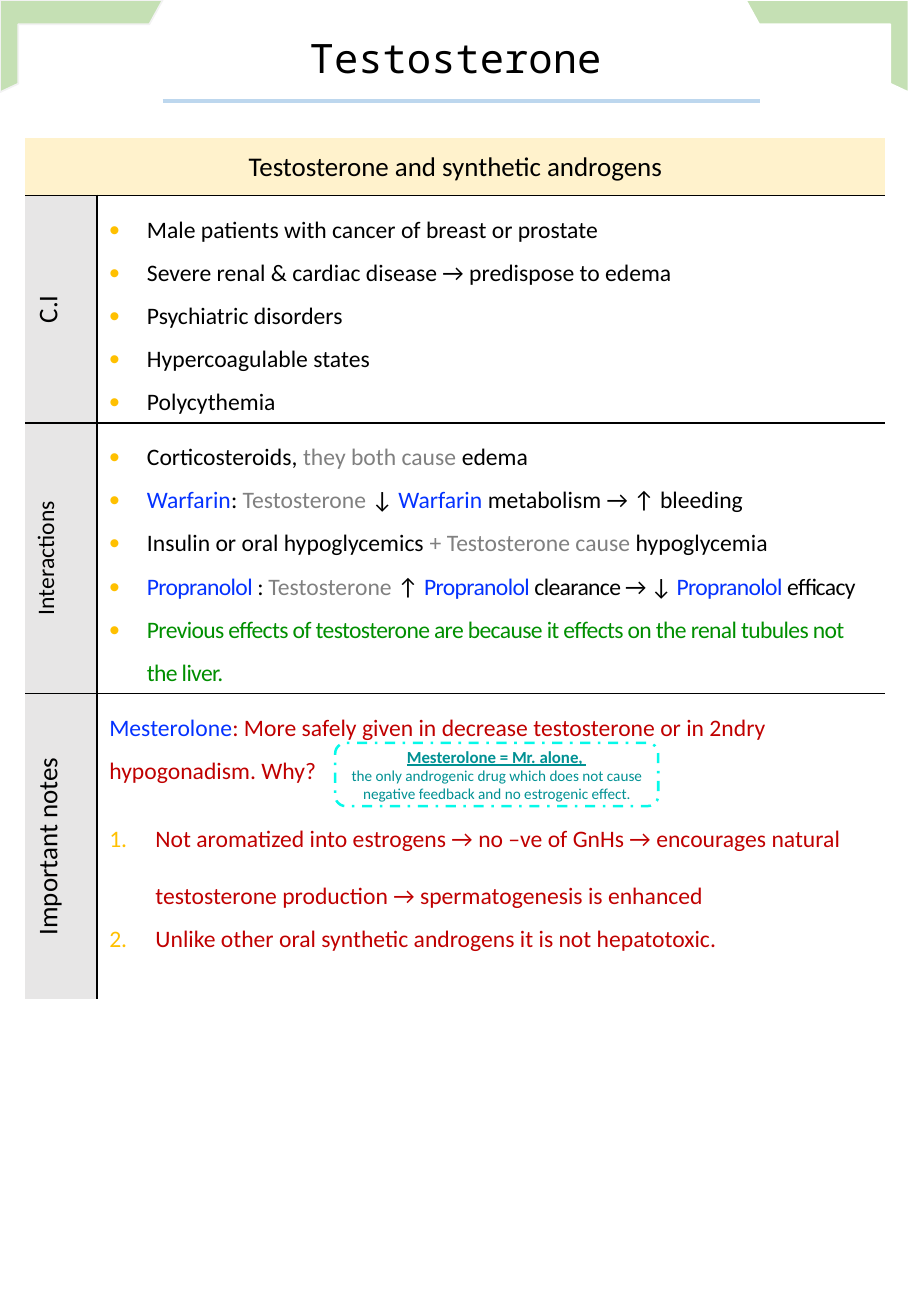
from dataclasses import dataclass

from lxml import etree
from pptx import Presentation
from pptx.dml.color import RGBColor
from pptx.enum.dml import MSO_LINE
from pptx.enum.shapes import MSO_CONNECTOR, MSO_SHAPE
from pptx.enum.text import MSO_ANCHOR, PP_ALIGN
from pptx.oxml.ns import qn
from pptx.util import Inches, Pt

CENTER, LEFT, MIDDLE, TOP = PP_ALIGN.CENTER, PP_ALIGN.LEFT, MSO_ANCHOR.MIDDLE, MSO_ANCHOR.TOP
TITLE_ONLY = 5
NO_TABLE_STYLE = "{2D5ABB26-0587-4C30-8999-92F81FD0307C}"


@dataclass(frozen=True)
class Theme:
    title_font: str = "Noto Sans Mono"
    body_font: str = "Calibri"
    title: int = 24
    heading: int = 16
    body: int = 14
    callout_lead: int = 10
    callout_body: int = 9
    black: str = "000000"
    white: str = "FFFFFF"
    grey: str = "808080"
    blue: str = "0432FF"
    green: str = "008F00"
    red: str = "C00000"
    teal: str = "009193"
    bullet: str = "FFC000"
    header_fill: str = "FFF2CC"
    label_fill: str = "E7E6E6"
    corner_fill: str = "C5E0B4"
    left_corner_line: str = "F2F2F2"
    rule: str = "BDD7EE"
    callout_line: str = "04F9E9"


theme = Theme()
BLACK, GREY, BLUE, GREEN, RED = theme.black, theme.grey, theme.blue, theme.green, theme.red
TIGHT = -40  # letter spacing, hundredths of a point

# Content: a paragraph is a list of (text, colour[, letter spacing]) runs
TITLE = "Testosterone"
HEADER = "Testosterone and synthetic androgens"
CONTRAINDICATIONS = [
    [("Male patients with cancer of breast or prostate", BLACK)],
    [("Severe renal & cardiac disease → predispose to edema", BLACK)],
    [("Psychiatric disorders", BLACK)],
    [("Hypercoagulable states", BLACK)],
    [("Polycythemia", BLACK)],
]
INTERACTIONS = [
    [("Corticosteroids, ", BLACK), ("they both cause ", GREY), ("edema", BLACK)],
    [("Warfarin", BLUE), (": ", BLACK), ("Testosterone ", GREY), ("↓ ", BLACK),
     ("Warfarin ", BLUE), ("metabolism → ↑ bleeding", BLACK)],
    [("Insulin or oral hypoglycemics ", BLACK), ("+ Testosterone cause ", GREY),
     ("hypoglycemia", BLACK)],
    [("Propranolol ", BLUE, TIGHT), (": ", BLACK, TIGHT), ("Testosterone ", GREY),
     ("↑ ", BLACK), ("Propranolol", BLUE, TIGHT), (" clearance → ↓ ", BLACK, TIGHT),
     ("Propranolol", BLUE, TIGHT), (" efficacy", BLACK, TIGHT)],
    [("Previous effects of testosterone are because it effects on the renal "
      "tubules not the liver.", GREEN, TIGHT)],
]
NOTES = [
    [("Mesterolone", BLUE),
     (": More safely given in decrease testosterone or in 2ndry hypogonadism. Why?", RED)],
    [("Not aromatized into estrogens → no –ve of GnHs → encourages natural "
      "testosterone production → spermatogenesis is enhanced", RED)],
    [("Unlike other oral synthetic androgens it is not hepatotoxic.", RED)],
]

# Paragraph formats: (marker, indent, line spacing, space before)
BULLET = ("bullet", 0.31, 1.5, 0)
NOTE_FORMATS = [(None, 0, 1.5, 12), ("number", 0.38, 2, 6), ("number", 0.38, 1.5, 0)]

# Rows: label, label size, anchor, paragraphs, formats
ROWS = [
    ("C.I", theme.heading, MIDDLE, CONTRAINDICATIONS, [BULLET] * 5),
    ("Interactions", theme.body, TOP, INTERACTIONS, [BULLET] * 5),
    ("Important notes", theme.heading, TOP, NOTES, NOTE_FORMATS),
]
CALLOUT = [
    ("Mesterolone = Mr. alone, ", theme.callout_lead, True),
    ("the only androgenic drug which does not cause negative feedback "
     "and no estrogenic effect.", theme.callout_body, False),
]

# Layout in inches
SLIDE_WIDTH, SLIDE_HEIGHT = 7.5, 10.84
TABLE_LEFT, TABLE_TOP = 0.21, 1.14
COLUMN_WIDTHS = [0.59, 6.49]
ROW_HEIGHTS = [0.47, 1.85, 2.2, 2.52]
FRAME_WIDTH = 7.48
CORNER = [(0, 0), (0, 0.76), (0.15, 0.69), (0.15, 0.2), (1.23, 0.2), (1.34, 0)]


def box(*lengths):
    return [Inches(length) for length in lengths]


def style(font, size, colour=None, name=theme.body_font):
    font.name, font.size = name, Pt(size)
    if colour:
        font.color.rgb = RGBColor.from_string(colour)


def paint(shape, fill, line, width):
    shape.shadow.inherit = False
    shape.fill.solid()
    shape.fill.fore_color.rgb = RGBColor.from_string(fill)
    shape.line.color.rgb = RGBColor.from_string(line)
    shape.line.width = Pt(width)


def child(parent, tag, **attributes):
    return etree.SubElement(parent, qn(tag), **attributes)


def add_marker(paragraph, marker, indent):
    properties = paragraph._p.get_or_add_pPr()
    offset = Inches(indent)
    properties.set("marL", str(offset))
    properties.set("indent", str(-offset))
    child(child(properties, "a:buClr"), "a:srgbClr", val=theme.bullet)
    if marker == "bullet":
        child(properties, "a:buSzPct", val="125000")
        child(properties, "a:buFont", typeface="Arial")
        child(properties, "a:buChar", char="•")
    else:
        child(properties, "a:buFont", typeface="+mj-lt")
        child(properties, "a:buAutoNum", type="arabicPeriod")


def set_borders(cell, sides):
    properties = cell._tc.get_or_add_tcPr()
    for position, side in enumerate(sides):
        line = etree.Element(qn("a:ln" + side), w=str(Pt(1)))
        child(child(line, "a:solidFill"), "a:srgbClr", val=BLACK)
        properties.insert(position, line)


def fill_cell(cell, colour, sides, anchor=MIDDLE):
    cell.fill.solid()
    cell.fill.fore_color.rgb = RGBColor.from_string(colour)
    cell.vertical_anchor = anchor
    set_borders(cell, sides)


def write_line(cell, text, size):
    paragraph = cell.text_frame.paragraphs[0]
    paragraph.text, paragraph.alignment = text, CENTER
    style(paragraph.font, size, BLACK)


def write_runs(frame, paragraphs, formats):
    for index, (runs, (marker, indent, spacing, before)) in enumerate(zip(paragraphs, formats)):
        paragraph = frame.add_paragraph() if index else frame.paragraphs[0]
        paragraph.alignment, paragraph.line_spacing = LEFT, float(spacing)
        paragraph.space_before = Pt(before)
        if marker:
            add_marker(paragraph, marker, indent)
        for text, colour, *tracking in runs:
            run = paragraph.add_run()
            run.text = text
            style(run.font, theme.body, colour)
            if tracking:
                run.font._element.set("spc", str(tracking[0]))


def add_title(slide):
    title = slide.shapes.title
    title.left, title.top, title.width, title.height = box(0.88, 0.22, 5.74, 0.5)
    title.text_frame.text = TITLE
    title.text_frame.vertical_anchor = MIDDLE
    paragraph = title.text_frame.paragraphs[0]
    paragraph.alignment = CENTER
    style(paragraph.font, theme.title, BLACK, theme.title_font)
    rule = slide.shapes.add_connector(MSO_CONNECTOR.STRAIGHT, *box(1.34, 0.83, 6.26, 0.83))
    rule.line.color.rgb = RGBColor.from_string(theme.rule)
    rule.line.width = Pt(2.25)
    child(rule._element.spPr, "a:effectLst")


def add_drug_table(slide):
    area = box(TABLE_LEFT, TABLE_TOP, sum(COLUMN_WIDTHS), sum(ROW_HEIGHTS))
    table = slide.shapes.add_table(len(ROW_HEIGHTS), len(COLUMN_WIDTHS), *area).table
    table.first_row = table.horz_banding = False
    table._tbl.tblPr.find(qn("a:tableStyleId")).text = NO_TABLE_STYLE
    for column, width in zip(table.columns, COLUMN_WIDTHS):
        column.width = Inches(width)
    for row, height in zip(table.rows, ROW_HEIGHTS):
        row.height = Inches(height)

    header = table.cell(0, 0)
    header.merge(table.cell(0, 1))
    write_line(header, HEADER, theme.heading)
    for column in range(2):
        fill_cell(table.cell(0, column), theme.header_fill, "B")

    for index, (label, size, anchor, paragraphs, formats) in enumerate(ROWS, 1):
        bottom = "B" if index < len(ROWS) else ""
        label_cell, body_cell = table.cell(index, 0), table.cell(index, 1)
        write_line(label_cell, label, size)
        fill_cell(label_cell, theme.label_fill, "RT" + bottom)
        label_cell._tc.get_or_add_tcPr().set("vert", "vert270")
        write_runs(body_cell.text_frame, paragraphs, formats)
        fill_cell(body_cell, theme.white, "LT" + bottom, anchor)


def add_corners(slide):
    mirrored = [(FRAME_WIDTH - x, y) for x, y in CORNER]
    for points, line in ((mirrored, theme.white), (CORNER, theme.left_corner_line)):
        start, *others = [tuple(box(*point)) for point in points]
        builder = slide.shapes.build_freeform(*start)
        builder.add_line_segments(others, close=True)
        paint(builder.convert_to_shape(), theme.corner_fill, line, 1)


def add_callout(slide):
    callout = slide.shapes.add_shape(MSO_SHAPE.ROUNDED_RECTANGLE, *box(2.76, 6.12, 2.66, 0.52))
    paint(callout, theme.white, theme.callout_line, 1.5)
    callout.line.dash_style = MSO_LINE.DASH_DOT
    frame = callout.text_frame
    frame.word_wrap, frame.vertical_anchor = True, MIDDLE
    for index, (text, size, lead) in enumerate(CALLOUT):
        paragraph = frame.add_paragraph() if index else frame.paragraphs[0]
        paragraph.text, paragraph.alignment = text, CENTER
        style(paragraph.font, size, theme.teal)
        paragraph.font.bold = paragraph.font.underline = lead


def main():
    presentation = Presentation()
    presentation.slide_width, presentation.slide_height = box(SLIDE_WIDTH, SLIDE_HEIGHT)
    slide = presentation.slides.add_slide(presentation.slide_layouts[TITLE_ONLY])
    add_title(slide)
    add_drug_table(slide)
    add_corners(slide)
    add_callout(slide)
    presentation.save("out.pptx")


if __name__ == "__main__":
    main()
